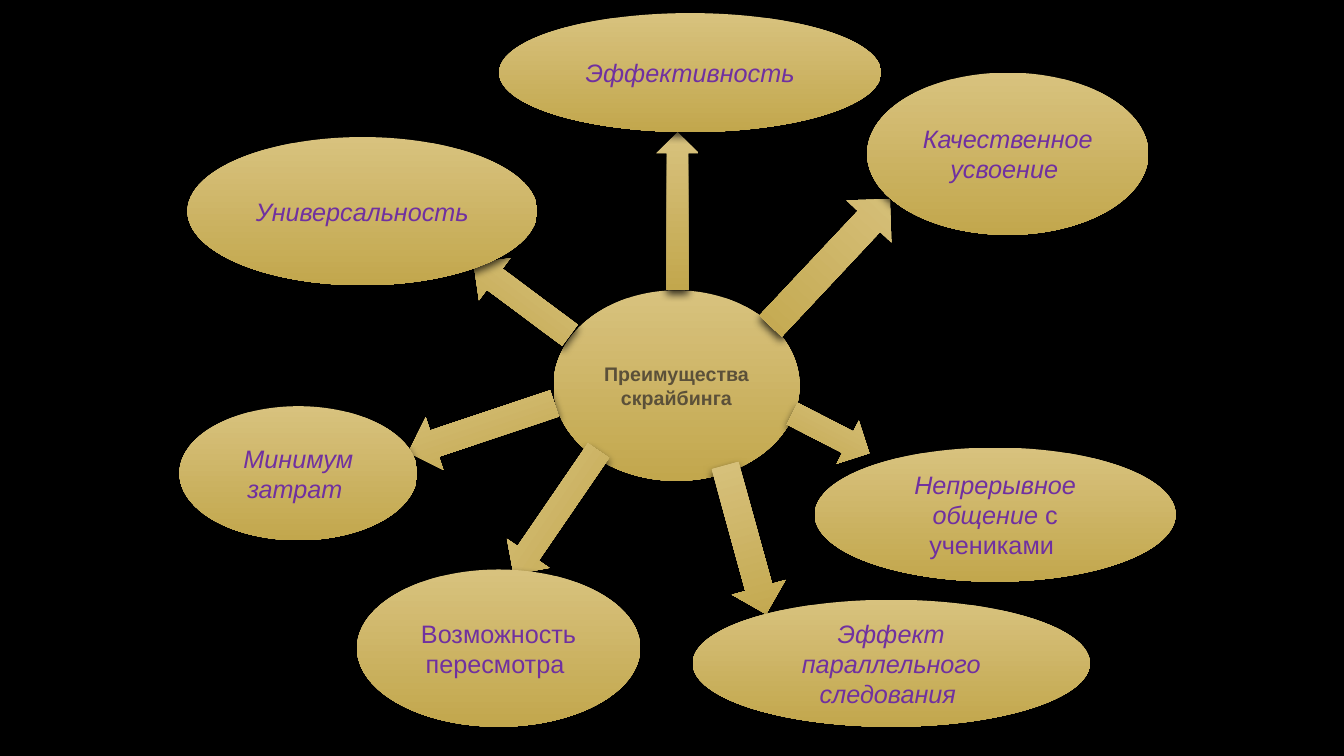
from lxml import etree
from pptx import Presentation
from pptx.dml.color import RGBColor
from pptx.enum.shapes import MSO_SHAPE
from pptx.enum.text import MSO_ANCHOR, PP_ALIGN
from pptx.oxml.ns import qn
from pptx.util import Emu, Pt

OVAL = MSO_SHAPE.OVAL
UP, DOWN = MSO_SHAPE.UP_ARROW, MSO_SHAPE.DOWN_ARROW
LEFT, RIGHT = MSO_SHAPE.LEFT_ARROW, MSO_SHAPE.RIGHT_ARROW
CENTER, MIDDLE = PP_ALIGN.CENTER, MSO_ANCHOR.MIDDLE

COLORS = {
    "background": "000000",
    "shadow": "000000",
    "gold_light": "D8C27E",
    "gold_dark": "C2A74D",
    "hub_text": "5B5039",
    "benefit_text": "7030A0",
}
FONT = "Arial"
SCALE = 9144  # EMU per px, 100 px to the inch


def px(value):
    return Emu(value * SCALE)


def rgb(name):
    return RGBColor.from_string(COLORS[name])


class MindMap:
    """Golden ovals and block arrows on one slide."""

    def __init__(self, slide):
        self.slide = slide
        background = slide.background.fill
        background.solid()
        background.fore_color.rgb = rgb("background")

    def golden(self, kind, box, angle=0):
        shape = self.slide.shapes.add_shape(kind, *map(px, box))
        shape.rotation = angle
        shape.line.fill.background()
        shape.fill.gradient()
        shape.fill.gradient_angle = 270
        for stop, color in zip(shape.fill.gradient_stops, ("gold_light", "gold_dark")):
            stop.color.rgb = rgb(color)
        self.drop_shadow(shape)
        return shape

    def drop_shadow(self, shape):
        shape.shadow.inherit = False
        effects = shape._element.spPr.find(qn("a:effectLst"))
        shadow = etree.SubElement(
            effects, qn("a:outerShdw"), blurRad=str(Pt(6)), dist=str(Pt(3)),
            dir="5400000", algn="ctr", rotWithShape="0")
        color = etree.SubElement(shadow, qn("a:srgbClr"), val=COLORS["shadow"])
        etree.SubElement(color, qn("a:alpha"), val="75000")

    def arrow(self, kind, box, angle):
        self.golden(kind, box, angle)

    def oval(self, box, paragraphs, size, color, bold=False):
        """Each paragraph is a list of (text, italic) runs."""
        frame = self.golden(OVAL, box).text_frame
        frame.word_wrap = True
        frame.vertical_anchor = MIDDLE
        for index, runs in enumerate(paragraphs):
            paragraph = frame.add_paragraph() if index else frame.paragraphs[0]
            paragraph.alignment = CENTER
            font = paragraph.font
            font.name, font.size, font.bold = FONT, Pt(size), bold
            font.color.rgb = rgb(color)
            for text, italic in runs:
                run = paragraph.add_run()
                run.text = text
                run.font.italic = italic


# Arrows: kind, box, rotation
ARROWS = [
    (DOWN, (712, 459, 55, 153), 344.6),
    (RIGHT, (781, 406, 86, 48), 27.2),
    (UP, (793, 174, 61, 173), 43.2),
    (UP, (651, 131, 42, 157), 0),
    (LEFT, (458, 271, 119, 52), 36.7),
    (LEFT, (401, 397, 153, 55), 341.5),
    (LEFT, (477, 483, 149, 51), 304.4),
]

# Benefits: box, runs
BENEFITS = [
    ((495, 13, 379, 118), [("Эффективность", True)]),
    ((860, 72, 279, 161), [("Качественное усвоение ", True)]),
    ((808, 444, 358, 133), [("Непрерывное общение", True), (" с учениками ", False)]),
    ((687, 595, 394, 126), [("Эффект параллельного следования ", True)]),
    ((354, 565, 281, 156), [("Возможность пересмотра ", False)]),
    ((178, 403, 236, 133), [("Минимум затрат ", True)]),
    ((186, 136, 347, 147), [("Универсальность", True)]),
]


def main():
    deck = Presentation()
    deck.slide_width, deck.slide_height = px(1333), px(750)
    mind_map = MindMap(deck.slides.add_slide(deck.slide_layouts[6]))

    # Hub
    mind_map.oval((549, 288, 244, 189),
                  [[("Преимущества", False)], [("скрайбинга", False)]],
                  14, "hub_text", bold=True)

    # Arrows from the hub
    for kind, box, angle in ARROWS:
        mind_map.arrow(kind, box, angle)

    # Benefits around the hub
    for box, runs in BENEFITS:
        mind_map.oval(box, [runs], 18, "benefit_text")

    deck.save("out.pptx")


if __name__ == "__main__":
    main()
